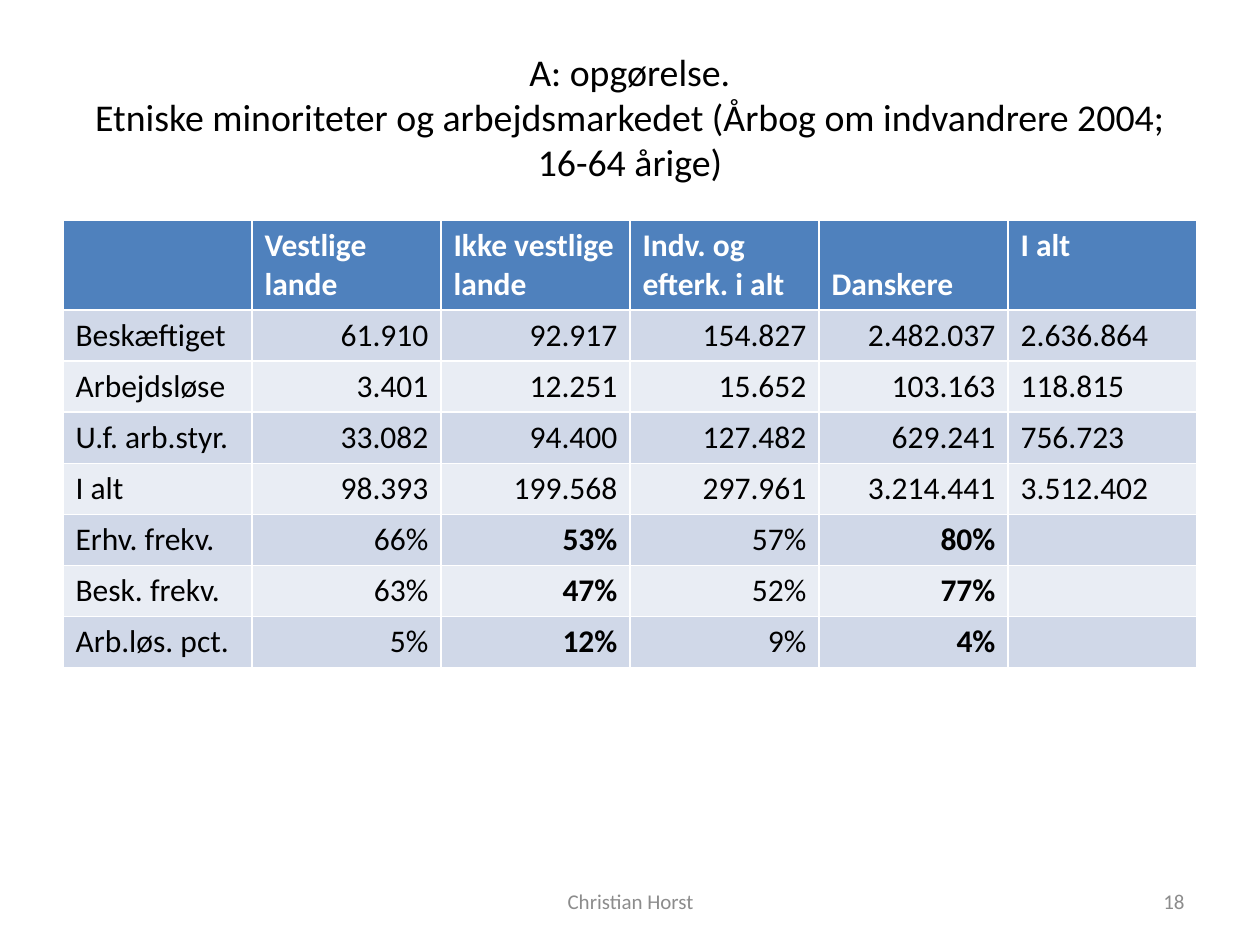
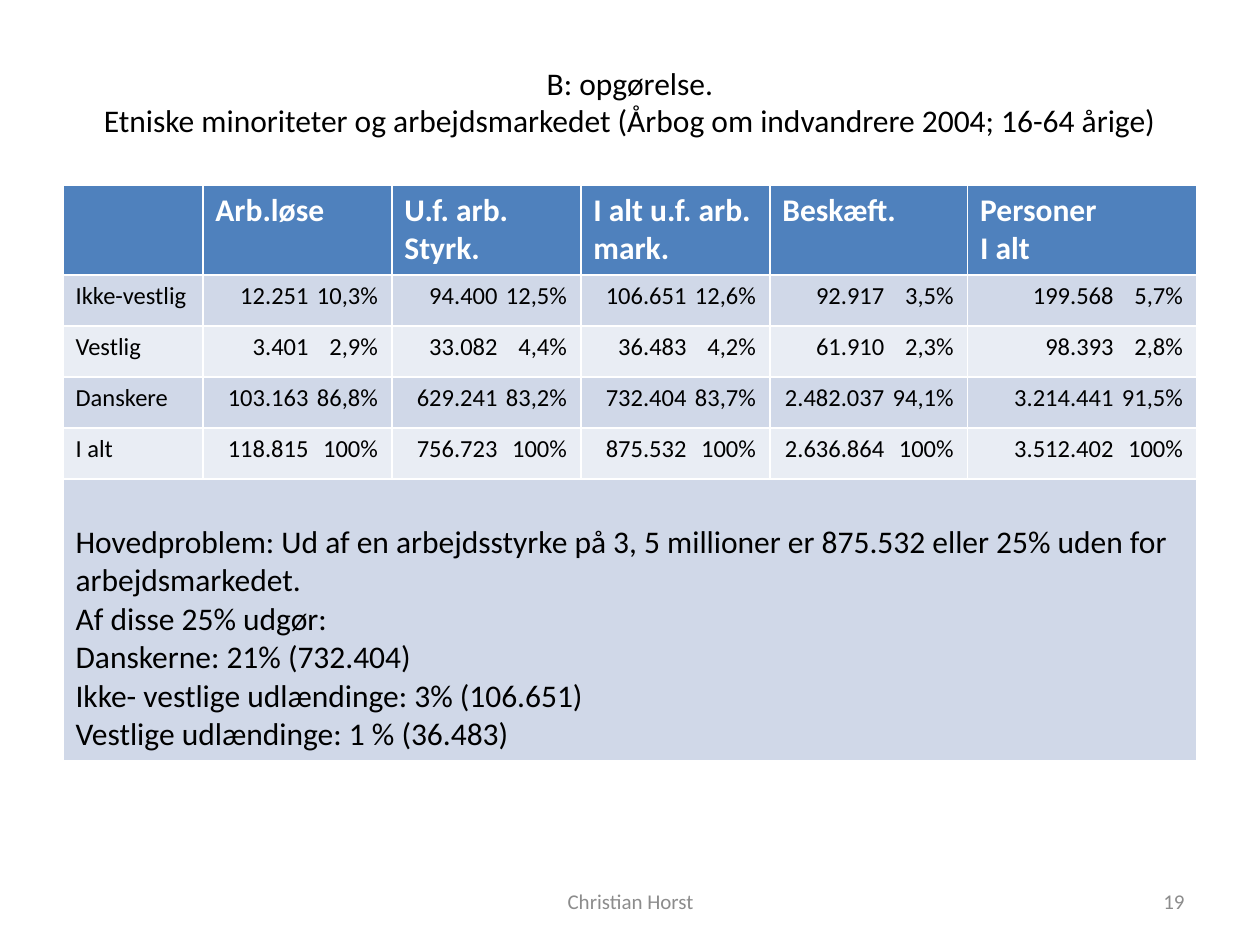
"""Build two slides of labour market tables with a shared title, table and footer style."""
from pptx import Presentation
from pptx.dml.color import RGBColor as Rgb
from pptx.enum.text import MSO_ANCHOR as Anchor, MSO_AUTO_SIZE as AutoSize, PP_ALIGN as Align
from pptx.oxml import parse_xml
from pptx.oxml.ns import nsdecls
from pptx.util import Inches, Pt

SUBJECT = "Etniske minoriteter og arbejdsmarkedet (Årbog om indvandrere 2004; 16-64 årige)"
AUTHOR = "Christian Horst"
SLIDES = [
    {
        "title": ["A: opgørelse.", SUBJECT],
        "number": "18", "title_size": 21.6, "title_height": 1.25, "top": 1.75,
        "body_size": 18,
        "columns": [1.5] * 6,
        "left_columns": {0, 5}, "bold_shares": {2, 4}, "low_headings": {4},
        "headings": ["", "Vestlige lande", "Ikke vestlige lande", "Indv. og efterk. i alt",
                     "Danskere", "I alt"],
        "rows": [
            ["Beskæftiget", "61.910", "92.917", "154.827", "2.482.037", "2.636.864"],
            ["Arbejdsløse", "3.401", "12.251", "15.652", "103.163", "118.815"],
            ["U.f. arb.styr.", "33.082", "94.400", "127.482", "629.241", "756.723"],
            ["I alt", "98.393", "199.568", "297.961", "3.214.441", "3.512.402"],
            ["Erhv. frekv.", "66%", "53%", "57%", "80%", ""],
            ["Besk. frekv.", "63%", "47%", "52%", "77%", ""],
            ["Arb.løs. pct.", "5%", "12%", "9%", "4%", ""],
        ],
        "conclusion": [],
    },
    {
        "title": ["B: opgørelse.", SUBJECT],
        "number": "19", "title_size": 18, "title_height": 1.01, "top": 1.47,
        "body_size": 14,
        "columns": [1.11, 1.5, 1.5, 1.5, 1.57, 1.82],
        "left_columns": {0}, "bold_shares": set(), "low_headings": set(),
        "headings": ["", "Arb.løse", "U.f. arb. Styrk.", "I alt u.f. arb. mark.",
                     "Beskæft.", "Personer\nI alt"],
        "rows": [
            ["Ikke-vestlig", ("12.251", "10,3%"), ("94.400", "12,5%"), ("106.651", "12,6%"),
             ("92.917", "3,5%"), ("199.568", "5,7%")],
            ["Vestlig", ("3.401", "2,9%"), ("33.082", "4,4%"), ("36.483", "4,2%"),
             ("61.910", "2,3%"), ("98.393", "2,8%")],
            ["Danskere", ("103.163", "86,8%"), ("629.241", "83,2%"), ("732.404", "83,7%"),
             ("2.482.037", "94,1%"), ("3.214.441", "91,5%")],
            ["I alt", ("118.815", "100%"), ("756.723", "100%"), ("875.532", "100%"),
             ("2.636.864", "100%"), ("3.512.402", "100%")],
        ],
        "conclusion": [
            "Hovedproblem: Ud af en arbejdsstyrke på 3, 5 millioner er 875.532 eller 25% "
            "uden for arbejdsmarkedet.",
            "Af disse 25% udgør:",
            "Danskerne: 21% (732.404)",
            "Ikke- vestlige udlændinge: 3% (106.651)",
            "Vestlige udlændinge: 1 % (36.483)",
        ],
    },
]

THEME = {
    "font": "Calibri", "ink": "000000", "paper": "FFFFFF", "muted": "8C8C8C",
    "heading": "4F81BD", "bands": ("D0D8E8", "E9EDF4"),
    "heading_size": 18, "conclusion_size": 18, "footer_size": 12,
}
MARGIN, WIDTH, TITLE_TOP = 0.5, 9, 0.3
HEADING_HEIGHT, ROW_HEIGHT, CONCLUSION_HEIGHT = Inches(0.7), Pt(29.2), Inches(2.23)
CELL_PADDING, SHARE_WIDTH, CONCLUSION_PADDING = 0.21, 0.55, 0.35
FOOTER_TOP, FOOTER_HEIGHT = 6.95, 0.4
FOOTER_SPOTS = {"number": (7.17, 2.33, Align.RIGHT), "author": (3.42, 3.17, Align.CENTER)}


def write(frame, text, size, color, align=Align.LEFT, bold=False):
    """Fill a text frame and format every paragraph."""
    frame.text = text
    frame.word_wrap = True
    style = {"name": THEME["font"], "size": Pt(size), "bold": bold}
    for paragraph in frame.paragraphs:
        paragraph.alignment = align
        for run in paragraph.runs:
            for key, value in style.items():
                setattr(run.font, key, value)
            run.font.color.rgb = Rgb.from_string(color)


def paint(cell, color):
    """Give a cell a solid fill."""
    cell.fill.solid()
    cell.fill.fore_color.rgb = Rgb.from_string(color)


def set_right_tabs(paragraph, positions):
    """Set right-aligned tab stops, in inches."""
    stops = "".join(f'<a:tab pos="{Inches(spot)}" algn="r"/>' for spot in positions)
    paragraph._p.get_or_add_pPr().append(
        parse_xml(f'<a:tabLst {nsdecls("a")}>{stops}</a:tabLst>'))


def write_value(cell, value, column, content):
    """Write one body cell, lining up a count and its share on tab stops."""
    size = content["body_size"]
    if isinstance(value, tuple):
        write(cell.text_frame, "".join(f"\t{part}" for part in value), size, THEME["ink"])
        edge = content["columns"][column] - CELL_PADDING
        set_right_tabs(cell.text_frame.paragraphs[0], (edge - SHARE_WIDTH, edge))
        return
    align = Align.LEFT if column in content["left_columns"] else Align.RIGHT
    bold = column in content["bold_shares"] and value.endswith("%")
    write(cell.text_frame, value, size, THEME["ink"], align, bold)


def add_figures(slide, content):
    """Add the table with headings, banded rows and an optional conclusion row."""
    heights = [HEADING_HEIGHT] + [ROW_HEIGHT] * len(content["rows"])
    if content["conclusion"]:
        heights.append(CONCLUSION_HEIGHT)
    table = slide.shapes.add_table(
        len(heights), len(content["columns"]), Inches(MARGIN), Inches(content["top"]),
        Inches(WIDTH), sum(heights)).table
    for column, width in zip(table.columns, content["columns"]):
        column.width = Inches(width)
    for row, height in zip(table.rows, heights):
        row.height = height
    for column, heading in enumerate(content["headings"]):
        cell = table.cell(0, column)
        paint(cell, THEME["heading"])
        write(cell.text_frame, heading, THEME["heading_size"], THEME["paper"], bold=True)
        if column in content["low_headings"]:
            cell.vertical_anchor = Anchor.BOTTOM
    for index, values in enumerate(content["rows"]):
        for column, value in enumerate(values):
            cell = table.cell(index + 1, column)
            paint(cell, THEME["bands"][index % 2])
            write_value(cell, value, column, content)
    if content["conclusion"]:
        last = len(heights) - 1
        cell = table.cell(last, 0)
        cell.merge(table.cell(last, len(content["columns"]) - 1))
        paint(cell, THEME["bands"][(last - 1) % 2])
        cell.margin_top = Inches(CONCLUSION_PADDING)
        write(cell.text_frame, "\n".join(content["conclusion"]),
              THEME["conclusion_size"], THEME["ink"])


def add_title(slide, content):
    """Place and format the title placeholder."""
    title = slide.shapes.title
    box = {"left": MARGIN, "top": TITLE_TOP, "width": WIDTH, "height": content["title_height"]}
    for key, value in box.items():
        setattr(title, key, Inches(value))
    title.text_frame.auto_size = AutoSize.NONE
    title.text_frame.vertical_anchor = Anchor.MIDDLE
    write(title.text_frame, "\n".join(content["title"]), content["title_size"],
          THEME["ink"], Align.CENTER)


def add_footer(slide, number):
    """Add the slide number and the author's name."""
    texts = {"number": number, "author": AUTHOR}
    for part, (left, width, align) in FOOTER_SPOTS.items():
        frame = slide.shapes.add_textbox(
            Inches(left), Inches(FOOTER_TOP), Inches(width), Inches(FOOTER_HEIGHT)).text_frame
        frame.vertical_anchor = Anchor.MIDDLE
        write(frame, texts[part], THEME["footer_size"], THEME["muted"], align)


def main():
    """Build and save the presentation."""
    deck = Presentation()
    deck.slide_width, deck.slide_height = Inches(10), Inches(7.5)
    for content in SLIDES:
        slide = deck.slides.add_slide(deck.slide_layouts[5])
        add_title(slide, content)
        add_figures(slide, content)
        add_footer(slide, content["number"])
    deck.save("out.pptx")


if __name__ == "__main__":
    main()
